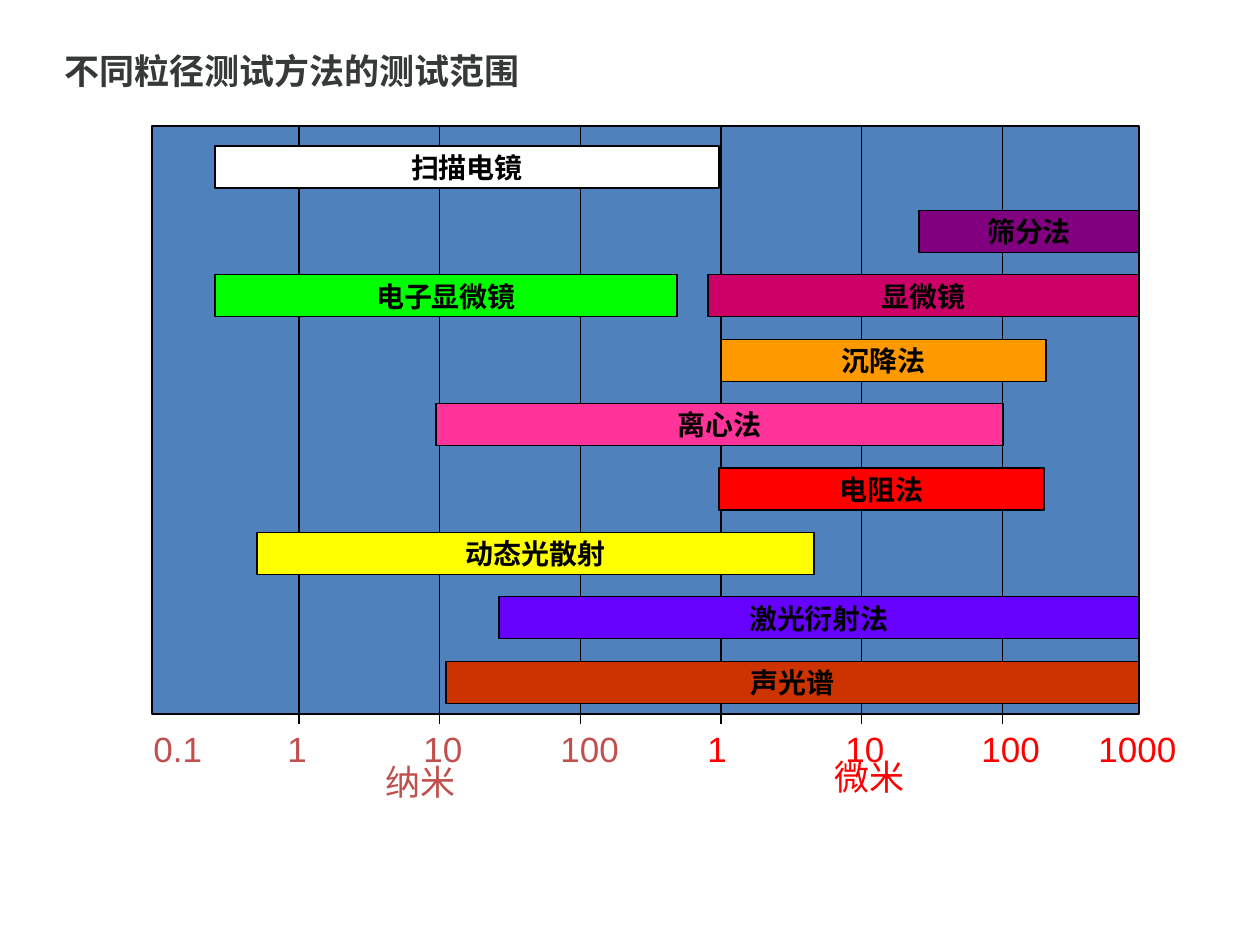
from pptx import Presentation
from pptx.dml.color import RGBColor as RGB
from pptx.enum.shapes import MSO_CONNECTOR as CONN, MSO_SHAPE as SHAPE
from pptx.enum.text import MSO_ANCHOR as ANCHOR, PP_ALIGN as ALIGN
from pptx.oxml.ns import qn
from pptx.util import Pt
from lxml.etree import SubElement

PX = 914400 / 126  # EMU per px
CJK = "Noto Sans CJK SC"

BLACK = RGB(0x00, 0x00, 0x00)
WHITE = RGB(0xFF, 0xFF, 0xFF)
INK = RGB(0x35, 0x39, 0x39)
BLUE = RGB(0x4F, 0x81, 0xBD)
NANO = RGB(0xC0, 0x50, 0x4D)
RED = RGB(0xFF, 0x00, 0x00)
PURPLE = RGB(0x80, 0x00, 0x80)
GREEN = RGB(0x00, 0xFF, 0x00)
CRIMSON = RGB(0xCC, 0x00, 0x66)
ORANGE = RGB(0xFF, 0x99, 0x00)
PINK = RGB(0xFF, 0x33, 0x99)
YELLOW = RGB(0xFF, 0xFF, 0x00)
VIOLET = RGB(0x66, 0x00, 0xFF)
RUST = RGB(0xCC, 0x33, 0x00)

# Method, row, left and width from the plot's left edge, fill
BARS = [
    ("扫描电镜", 0, 63, 504, WHITE),
    ("筛分法", 1, 767, 220, PURPLE),
    ("电子显微镜", 2, 63, 462, GREEN),
    ("显微镜", 2, 556, 431, CRIMSON),
    ("沉降法", 3, 569, 325, ORANGE),
    ("离心法", 4, 284, 567, PINK),
    ("电阻法", 5, 567, 325, RED),
    ("动态光散射", 6, 105, 557, YELLOW),
    ("激光衍射法", 7, 347, 640, VIOLET),
    ("声光谱", 8, 294, 693, RUST),
]
# Text, left from the plot's left edge, top below the plot, width, colour
LABELS = [
    ("0.1", -11, 7, 84, NANO),
    ("1", 123, 7, 42, NANO),
    ("10", 259, 7, 73, NANO),
    ("100", 396, 7, 94, NANO),
    ("1", 543, 7, 42, RED),
    ("10", 681, 7, 73, RED),
    ("100", 817, 7, 94, RED),
    ("1000", 934, 7, 126, RED),
    ("纳米", 221, 40, 231, NANO),
    ("微米", 670, 35, 189, RED),
]


def px(*lengths):
    return [round(n * PX) for n in lengths]


def write(sp, text, size=20, color=BLACK, bold=False, font="Arial",
          align=ALIGN.LEFT, anchor=ANCHOR.TOP, wrap=True):
    tf = sp.text_frame
    tf.word_wrap = wrap
    tf.vertical_anchor = anchor
    p = tf.paragraphs[0]
    p.alignment = align
    r = p.add_run()
    r.text = text
    r.font.size, r.font.bold, r.font.name = Pt(size), bold, font
    r.font.color.rgb = color
    SubElement(r._r.get_or_add_rPr(), qn("a:ea")).set("typeface", CJK)


def add_text(s, x, y, w, h, text, **fmt):
    write(s.shapes.add_textbox(*px(x, y, w, h)), text, **fmt)


def add_rect(s, x, y, w, h, fill):
    sp = s.shapes.add_shape(SHAPE.RECTANGLE, *px(x, y, w, h))
    sp.shadow.inherit = False
    sp.fill.solid()
    sp.fill.fore_color.rgb = fill
    sp.line.color.rgb = BLACK
    sp.line.width = Pt(0.75)
    return sp


def add_vline(s, x, top, bottom):
    line = s.shapes.add_connector(CONN.STRAIGHT, *px(x, top, x, bottom))
    line.line.color.rgb = BLACK
    line.line.width = Pt(0.75)
    SubElement(line._element.spPr, qn("a:effectLst"))


def add_plot(s, x, y, w, h):
    add_rect(s, x, y, w, h, BLUE)
    # One line per decade, running past the frame as a tick
    for decade in range(6):
        add_vline(s, x + 147 + decade * 140.7, y, y + h + 10)
    # Measuring range of each method
    for name, row, left, width, fill in BARS:
        bar = add_rect(s, x + left, y + 20 + row * 64.4, width, 42, fill)
        write(bar, name, size=16, bold=True, align=ALIGN.CENTER,
              anchor=ANCHOR.MIDDLE, wrap=False)


def add_axis(s, x, y):
    for text, left, top, width, color in LABELS:
        add_text(s, x + left, y + top, width, 54, text, color=color)


def main():
    prs = Presentation()
    prs.slide_width, prs.slide_height = px(1260, 945)
    s = prs.slides.add_slide(prs.slide_layouts[6])
    add_plot(s, 152, 126, 987, 588)
    add_axis(s, 152, 714)
    add_text(s, 52, 43, 617, 60, "不同粒径测试方法的测试范围",
             color=INK, bold=True, font=CJK)
    prs.save("out.pptx")


if __name__ == "__main__":
    main()
